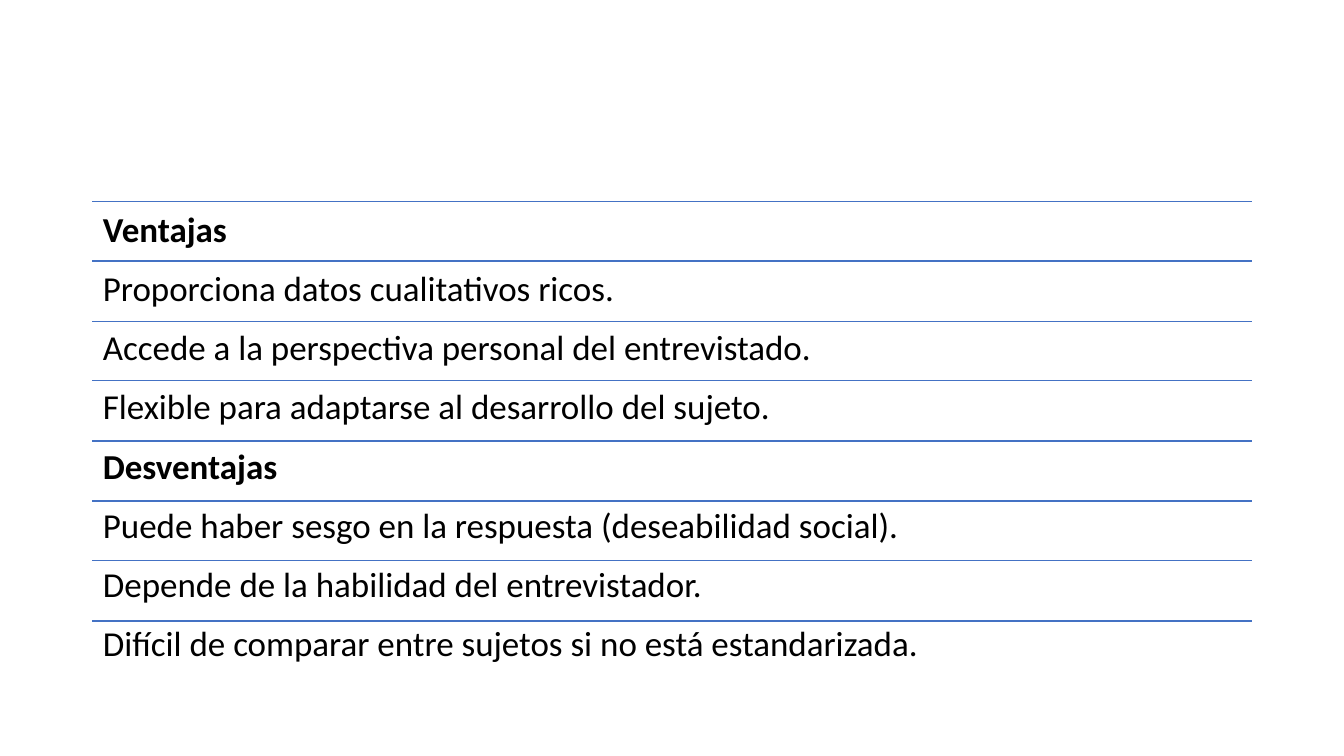
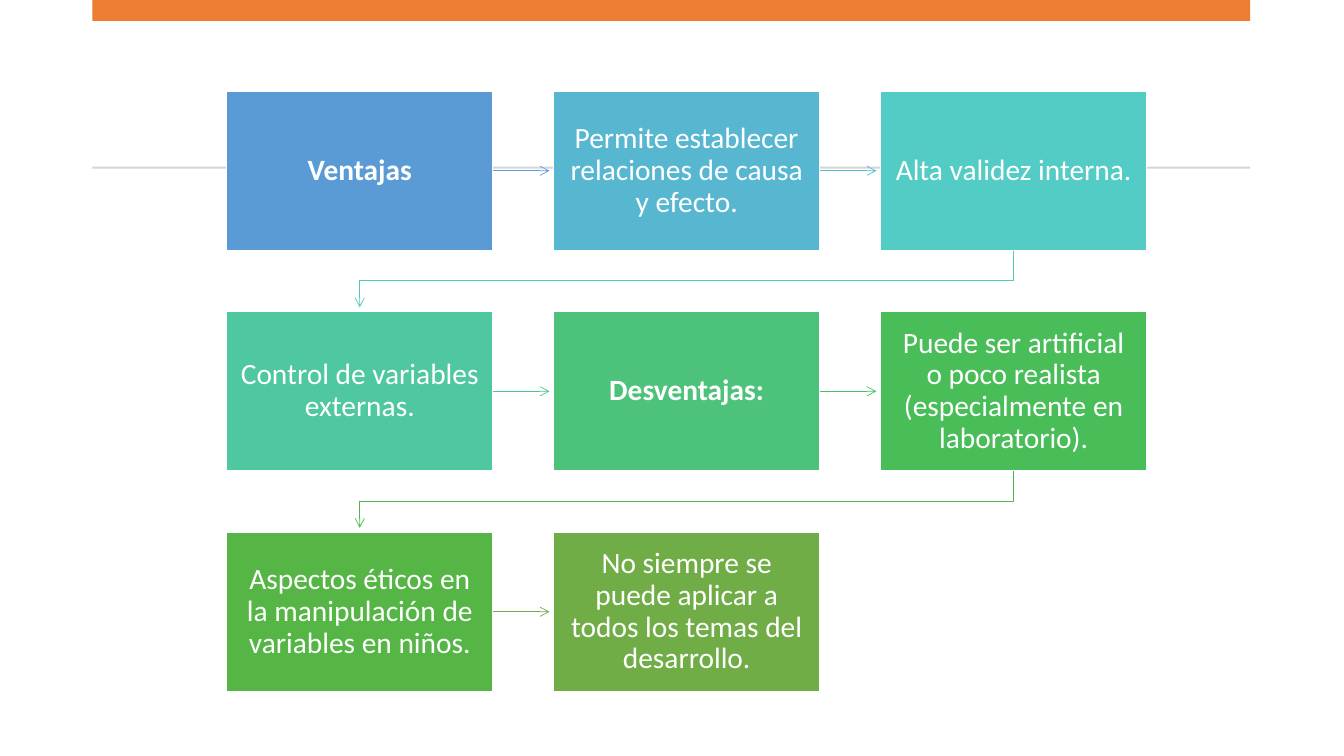
from lxml import etree
from pptx import Presentation
from pptx.dml.color import RGBColor
from pptx.enum.shapes import MSO_CONNECTOR, MSO_SHAPE
from pptx.enum.text import MSO_ANCHOR, MSO_AUTO_SIZE, PP_ALIGN
from pptx.oxml.ns import qn
from pptx.util import Pt

PX = 6350  # 144 px to the inch
STRAIGHT = MSO_CONNECTOR.STRAIGHT
RECT = MSO_SHAPE.RECTANGLE
MIDDLE, TOP = MSO_ANCHOR.MIDDLE, MSO_ANCHOR.TOP
CENTER, LEFT = PP_ALIGN.CENTER, PP_ALIGN.LEFT
CONTENT_LAYOUT, BLANK_LAYOUT = 1, 6

FONT = "Calibri"
BLACK = RGBColor(0x00, 0x00, 0x00)
WHITE = RGBColor(0xFF, 0xFF, 0xFF)
BLUE = RGBColor(0x44, 0x72, 0xC4)
ORANGE = RGBColor(0xED, 0x7D, 0x31)
GREY = RGBColor(0xD5, 0xD5, 0xD5)

MARGIN = 132
LIST_TOP, LIST_W, LIST_H = 288, 1656, 685
BAND_W = 1654
BOX_X, BOX_Y, BOX_W, BOX_H = 324, 130, 380, 228
PITCH_X, PITCH_Y, COLUMNS = 467, 315, 3
ARROW_GAP = 6

HEADINGS = ("Ventajas", "Desventajas", "Desventajas:")
INTERVIEW = [
    "Ventajas",
    "Proporciona datos cualitativos ricos.",
    "Accede a la perspectiva personal del entrevistado.",
    "Flexible para adaptarse al desarrollo del sujeto.",
    "Desventajas",
    "Puede haber sesgo en la respuesta (deseabilidad social).",
    "Depende de la habilidad del entrevistador.",
    "Difícil de comparar entre sujetos si no está estandarizada.",
]
# Text, box colour, colour of the arrow to the next box
EXPERIMENT = [
    ("Ventajas", RGBColor(0x5B, 0x9B, 0xD5), RGBColor(0x5B, 0x9B, 0xD5)),
    ("Permite establecer relaciones de causa y efecto.",
     RGBColor(0x57, 0xB7, 0xD1), RGBColor(0x56, 0xBC, 0xD0)),
    ("Alta validez interna.",
     RGBColor(0x53, 0xCC, 0xC5), RGBColor(0x52, 0xCA, 0xB8)),
    ("Control de variables externas.",
     RGBColor(0x4F, 0xC7, 0xA0), RGBColor(0x4D, 0xC5, 0x8D)),
    ("Desventajas:", RGBColor(0x4C, 0xC2, 0x7B), RGBColor(0x49, 0xBF, 0x64)),
    ("Puede ser artificial o poco realista (especialmente en laboratorio).",
     RGBColor(0x48, 0xBD, 0x58), RGBColor(0x50, 0xB8, 0x46)),
    ("Aspectos éticos en la manipulación de variables en niños.",
     RGBColor(0x55, 0xB6, 0x46), RGBColor(0x70, 0xAD, 0x47)),
    ("No siempre se puede aplicar a todos los temas del desarrollo.",
     RGBColor(0x70, 0xAD, 0x47), None),
]


def px(*lengths):
    return [n * PX for n in lengths]


def set_frame(tf, inset_x, inset_y, anchor):
    tf.word_wrap = True
    tf.auto_size = MSO_AUTO_SIZE.NONE
    tf.vertical_anchor = anchor
    tf.margin_left = tf.margin_right = inset_x * PX
    tf.margin_top = tf.margin_bottom = inset_y * PX


def format_paragraph(p, size, color, align):
    p.alignment = align
    p.line_spacing = 0.9
    p.space_before = Pt(0)
    for r in p.runs:
        r.font.name = FONT
        r.font.size = Pt(size)
        r.font.bold = p.text in HEADINGS
        r.font.color.rgb = color


def set_line(sp, color, width):
    sp.line.color.rgb = color
    sp.line.width = Pt(width)


def add_arrowhead(sp):
    etree.SubElement(sp.line._get_or_add_ln(), qn("a:tailEnd"), type="arrow")


def add_line(slide, x1, y1, x2, y2, color, width):
    line = slide.shapes.add_connector(STRAIGHT, *px(x1, y1, x2, y2))
    set_line(line, color, width)
    etree.SubElement(line._element.spPr, qn("a:effectLst"))
    return line


def add_rect(slide, x, y, w, h, fill):
    sp = slide.shapes.add_shape(RECT, *px(x, y, w, h))
    sp.shadow.inherit = False
    sp.fill.solid()
    sp.fill.fore_color.rgb = fill
    sp.line.fill.background()
    return sp


def add_ruled_list(slide, items):
    """Fill the body placeholder and rule a line above each item."""
    slide.shapes.title._element.getparent().remove(slide.shapes.title._element)
    body = slide.placeholders[1]
    body.left, body.top, body.width, body.height = px(
        MARGIN, LIST_TOP, LIST_W, LIST_H)
    tf = body.text_frame
    set_frame(tf, 15, 15, TOP)
    tf.text = "\n".join(items)
    for i, p in enumerate(tf.paragraphs):
        pPr = p._p.get_or_add_pPr()
        pPr.set("marL", "0")
        pPr.set("indent", "0")
        etree.SubElement(pPr, qn("a:buNone"))
        format_paragraph(p, 25, BLACK, LEFT)
        p.space_after = Pt(15.3)
        y = LIST_TOP + LIST_H * i // len(items)
        add_line(slide, MARGIN, y, MARGIN + LIST_W, y, BLUE, 1)


def add_box(slide, x, y, text, fill):
    sp = add_rect(slide, x, y, BOX_W, BOX_H, fill)
    set_line(sp, WHITE, 1)
    tf = sp.text_frame
    set_frame(tf, 19, 20, MIDDLE)
    tf.text = text
    format_paragraph(tf.paragraphs[0], 21, WHITE, CENTER)
    return sp


def add_step_arrow(slide, box, x, y, color):
    """Arrow from the right side of a box towards its neighbour."""
    mid = y + BOX_H // 2
    arrow = add_line(slide, x + BOX_W, mid, x + PITCH_X - ARROW_GAP, mid,
                     color, 0.5)
    arrow.begin_connect(box, 3)
    add_arrowhead(arrow)


def add_return_arrow(slide, x, y, color):
    """Bent arrow from the last box of a row to the first of the next."""
    start_x, end_x = x + BOX_W // 2, BOX_X + BOX_W // 2
    bottom, end_y = y + BOX_H, y + PITCH_Y - ARROW_GAP
    bend = (y + PITCH_Y + bottom) // 2
    builder = slide.shapes.build_freeform(*px(start_x, bottom))
    points = [(start_x, bend), (end_x, bend), (end_x, end_y)]
    builder.add_line_segments([px(*pt) for pt in points], close=False)
    sp = builder.convert_to_shape()
    sp.shadow.inherit = False
    sp.fill.background()
    set_line(sp, color, 0.5)
    add_arrowhead(sp)


def add_flow(slide, steps):
    for i, (text, fill, arrow_color) in enumerate(steps):
        row, col = divmod(i, COLUMNS)
        x, y = BOX_X + col * PITCH_X, BOX_Y + row * PITCH_Y
        box = add_box(slide, x, y, text, fill)
        if arrow_color is None:
            continue
        if col < COLUMNS - 1:
            add_step_arrow(slide, box, x, y, arrow_color)
        else:
            add_return_arrow(slide, x, y, arrow_color)


def main():
    prs = Presentation()
    prs.slide_width, prs.slide_height = px(1920, 1080)
    layouts = prs.slide_layouts

    add_ruled_list(prs.slides.add_slide(layouts[CONTENT_LAYOUT]), INTERVIEW)

    slide = prs.slides.add_slide(layouts[BLANK_LAYOUT])
    add_rect(slide, MARGIN, 0, BAND_W, 30, ORANGE)
    add_rect(slide, MARGIN, 238, BAND_W, 3, GREY)
    add_flow(slide, EXPERIMENT)

    prs.save("out.pptx")


if __name__ == "__main__":
    main()
